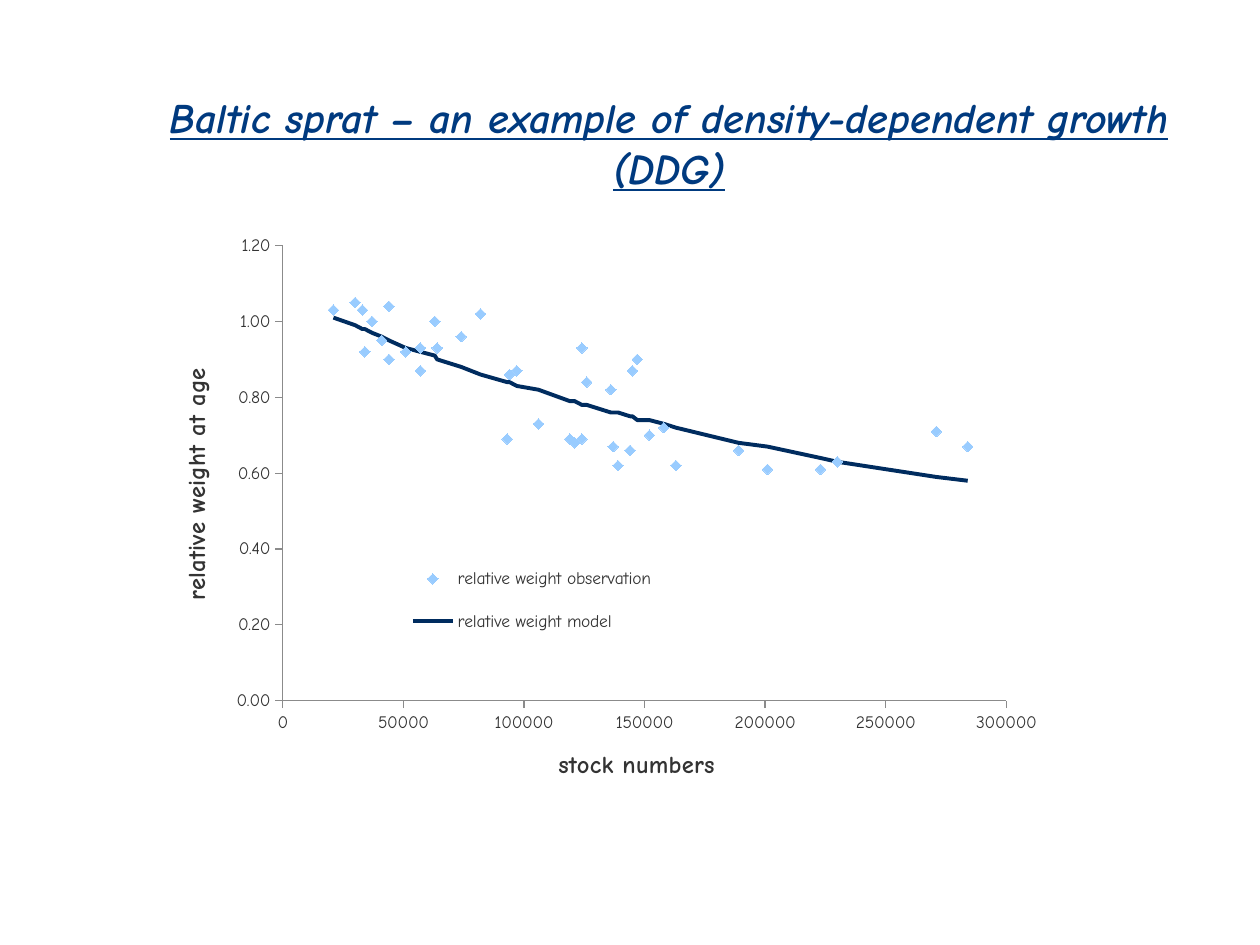
import pptx
import pptx.chart.data
import pptx.dml.color
import pptx.enum.chart
import pptx.enum.text
import pptx.oxml
import pptx.oxml.ns
import pptx.util
from pptx.util import Cm

FONT = "Comic Neue"
TITLE_BLUE = pptx.dml.color.RGBColor(0x00, 0x3A, 0x7F)
MODEL_BLUE = pptx.dml.color.RGBColor(0x00, 0x2C, 0x5F)
MARKER_BLUE = pptx.dml.color.RGBColor(0x99, 0xCC, 0xFF)
TEXT_GREY = pptx.dml.color.RGBColor(0x33, 0x33, 0x33)
AXIS_GREY = pptx.dml.color.RGBColor(0x8B, 0x8B, 0x8B)

# Stock numbers in thousands, with relative weight at age
OBSERVATIONS = [
    (126, 0.84), (94, 0.86), (57, 0.87), (147, 0.9), (97, 0.87), (51, 0.92),
    (34, 0.92), (21, 1.03), (37, 1), (30, 1.05), (74, 0.96), (64, 0.93),
    (57, 0.93), (41, 0.95), (44, 0.9), (33, 1.03), (44, 1.04), (63, 1),
    (82, 1.02), (124, 0.93), (145, 0.87), (136, 0.82), (271, 0.71),
    (284, 0.67), (201, 0.61), (223, 0.61), (158, 0.72), (152, 0.7),
    (119, 0.69), (93, 0.69), (137, 0.67), (230, 0.63), (163, 0.62),
    (139, 0.62), (144, 0.66), (124, 0.69), (189, 0.66), (121, 0.68),
    (106, 0.73),
]
MODEL = [
    (21, 1.01), (30, 0.99), (33, 0.98), (34, 0.98), (37, 0.97), (41, 0.96),
    (44, 0.95), (44, 0.95), (51, 0.93), (57, 0.92), (57, 0.92), (63, 0.91),
    (64, 0.9), (74, 0.88), (82, 0.86), (93, 0.84), (94, 0.84), (97, 0.83),
    (106, 0.82), (119, 0.79), (121, 0.79), (124, 0.78), (124, 0.78),
    (126, 0.78), (136, 0.76), (137, 0.76), (139, 0.76), (144, 0.75),
    (145, 0.75), (147, 0.74), (152, 0.74), (158, 0.73), (163, 0.72),
    (189, 0.68), (201, 0.67), (223, 0.64), (230, 0.63), (271, 0.59),
    (284, 0.58),
]


def write_text(text_frame, text, size, color, bold=True, italic=False, underline=False):
    paragraph = text_frame.paragraphs[0]
    paragraph.alignment = pptx.enum.text.PP_ALIGN.CENTER
    run = paragraph.add_run()
    run.text = text
    run.font.name = FONT
    run.font.size = pptx.util.Pt(size)
    run.font.color.rgb = color
    run.font.bold = bold
    run.font.italic = italic
    run.font.underline = underline


def set_layout(parent, x, y, width, height, inner=False):
    target = '<c:layoutTarget val="inner"/>' if inner else ""
    layout = pptx.oxml.parse_xml(
        f'<c:layout {pptx.oxml.ns.nsdecls("c")}><c:manualLayout>{target}'
        '<c:xMode val="edge"/><c:yMode val="edge"/>'
        f'<c:x val="{x}"/><c:y val="{y}"/><c:w val="{width}"/><c:h val="{height}"/>'
        "</c:manualLayout></c:layout>")
    for previous in parent.findall(pptx.oxml.ns.qn("c:layout")):
        parent.remove(previous)
    # The layout follows the legend position, and comes first in the plot area
    position = parent.find(pptx.oxml.ns.qn("c:legendPos"))
    parent.insert(0 if position is None else 1, layout)


presentation = pptx.Presentation()
presentation.slide_width = Cm(25.4)
presentation.slide_height = Cm(19.05)
slide = presentation.slides.add_slide(presentation.slide_layouts[6])

# Title
title = slide.shapes.add_textbox(Cm(2.49), Cm(1.73), Cm(22), Cm(2.31))
title.text_frame.word_wrap = True
write_text(title.text_frame, "Baltic sprat – an example of density-dependent growth (DDG)",
           24, TITLE_BLUE, italic=True, underline=True)

# Scatter chart
chart_data = pptx.chart.data.XyChartData()
for name, points in (("relative weight observation", OBSERVATIONS),
                     ("relative weight model", MODEL)):
    series_data = chart_data.add_series(name)
    for thousands, weight in points:
        series_data.add_data_point(thousands * 1000, weight)
chart = slide.shapes.add_chart(
    pptx.enum.chart.XL_CHART_TYPE.XY_SCATTER,
    Cm(3.51), Cm(4.52), Cm(17.81), Cm(11.4), chart_data).chart
chart.has_title = False
chart.font.name = FONT
chart.font.size = pptx.util.Pt(10)
chart.font.color.rgb = TEXT_GREY
chart.plots[0].vary_by_categories = False
set_layout(chart.plots[0]._element.getparent(), 0.123, 0.038, 0.819, 0.805, inner=True)

# Series: diamonds for observations, a line for the model
observations, model = chart.plots[0].series
observations.smooth = model.smooth = False
observations.format.line.fill.background()
observations.marker.style = pptx.enum.chart.XL_MARKER_STYLE.DIAMOND
observations.marker.size = 6
observations.marker.format.fill.solid()
observations.marker.format.fill.fore_color.rgb = MARKER_BLUE
observations.marker.format.line.fill.background()
model.marker.style = pptx.enum.chart.XL_MARKER_STYLE.NONE
model.format.line.color.rgb = MODEL_BLUE
model.format.line.width = pptx.util.Pt(2.25)

# Axes
for axis, label, maximum, step, number_format in (
        (chart.category_axis, "stock numbers", 300000, 50000, "0"),
        (chart.value_axis, "relative weight at age", 1.2, 0.2, "0.00")):
    axis.minimum_scale = 0
    axis.maximum_scale = maximum
    axis.major_unit = step
    axis.has_major_gridlines = False
    axis.major_tick_mark = pptx.enum.chart.XL_TICK_MARK.OUTSIDE
    axis.minor_tick_mark = pptx.enum.chart.XL_TICK_MARK.NONE
    axis.tick_labels.number_format = number_format
    axis.tick_labels.number_format_is_linked = False
    axis.format.line.color.rgb = AXIS_GREY
    axis.format.line.width = pptx.util.Pt(0.75)
    write_text(axis.axis_title.text_frame, label, 14, TEXT_GREY)

# Legend inside the plot
chart.has_legend = True
chart.legend.position = pptx.enum.chart.XL_LEGEND_POSITION.RIGHT
chart.legend.include_in_layout = False
set_layout(chart.legend._element, 0.23, 0.57, 0.35, 0.19)

presentation.save("out.pptx")
